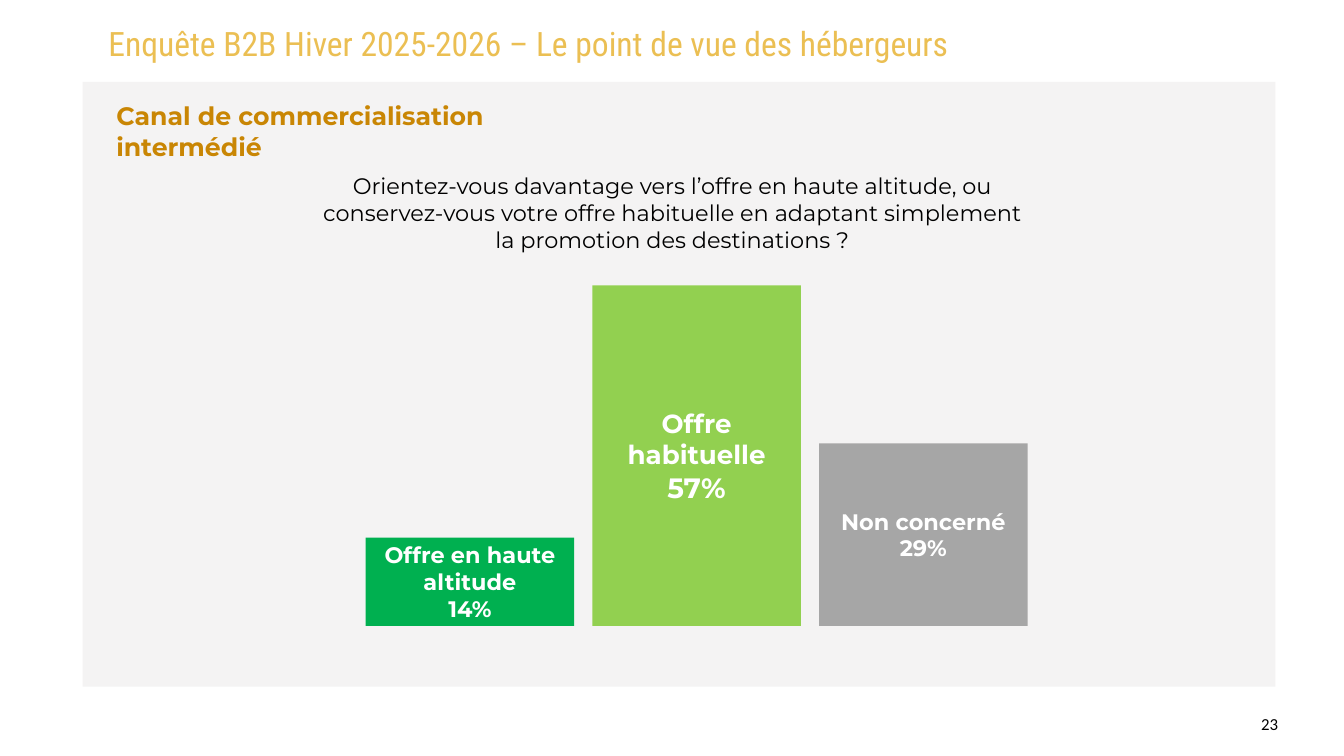
from dataclasses import dataclass

from pptx import Presentation
from pptx import util as u
from pptx.dml.color import RGBColor
from pptx.enum import shapes, text
from pptx.oxml.xmlchemy import OxmlElement


@dataclass(frozen=True)
class Theme:
    title_font: str = "Roboto Condensed"
    body_font: str = "Montserrat"
    number_font: str = "Calibri"
    title_color: str = "EBBF53"
    heading_color: str = "C98604"
    text_color: str = "000000"
    bar_text_color: str = "FFFFFF"
    panel_color: str = "F4F3F3"
    high_altitude_color: str = "00B050"
    usual_color: str = "92D050"
    unconcerned_color: str = "A6A6A6"
    title_size: int = 36
    heading_size: int = 27
    question_size: int = 24
    number_size: int = 18
    bar_size: int = 24
    tall_bar_size: int = 28
    tall_value_size: int = 30


class SlideBuilder:
    def __init__(self, slide, theme):
        self.slide = slide
        self.theme = theme

    def place(self, shape, left, top, width, height):
        shape.left, shape.top = u.Cm(left), u.Cm(top)
        shape.width, shape.height = u.Cm(width), u.Cm(height)

    def format(self, paragraph, font, size, color, bold=False, align=text.PP_ALIGN.LEFT):
        paragraph.alignment = align
        for run in paragraph.runs:
            run.font.name = font
            run.font.size = u.Pt(size)
            run.font.bold = bold
            run.font.color.rgb = RGBColor.from_string(color)

    def prepare(self, frame, anchor=text.MSO_ANCHOR.TOP):
        frame.word_wrap = True
        frame.auto_size = text.MSO_AUTO_SIZE.NONE
        frame.vertical_anchor = anchor

    def rectangle(self, color, *box):
        shape = self.slide.shapes.add_shape(
            shapes.MSO_SHAPE.RECTANGLE, *(u.Cm(length) for length in box))
        shape.shadow.inherit = False
        shape.fill.solid()
        shape.fill.fore_color.rgb = RGBColor.from_string(color)
        shape.line.fill.background()
        return shape

    def panel(self, *box):
        shape = self.rectangle(self.theme.panel_color, *box)
        self.slide.shapes.title.element.addprevious(shape.element)

    def title(self, content, *box):
        shape = self.slide.shapes.title
        self.place(shape, *box)
        self.prepare(shape.text_frame)
        shape.text_frame.text = content
        self.format(shape.text_frame.paragraphs[0], self.theme.title_font,
                    self.theme.title_size, self.theme.title_color)

    def heading(self, content, *box):
        shape = self.slide.placeholders[1]
        self.place(shape, *box)
        self.prepare(shape.text_frame)
        shape.text_frame.text = content
        paragraph = shape.text_frame.paragraphs[0]
        properties = paragraph._p.get_or_add_pPr()
        properties.set("marL", "0")
        properties.set("indent", "0")
        properties.append(OxmlElement("a:buNone"))
        paragraph.space_before = u.Pt(0)
        self.format(paragraph, self.theme.body_font, self.theme.heading_size,
                    self.theme.heading_color, bold=True)

    def label(self, content, font, size, align, *box):
        shape = self.slide.shapes.add_textbox(*(u.Cm(length) for length in box))
        self.prepare(shape.text_frame)
        shape.text_frame.text = content
        self.format(shape.text_frame.paragraphs[0], font, size,
                    self.theme.text_color, align=align)

    def bar(self, name, value, color, name_size, value_size, *box):
        shape = self.rectangle(color, *box)
        self.prepare(shape.text_frame, text.MSO_ANCHOR.MIDDLE)
        shape.text_frame.text = f"{name}\n{value}"
        for paragraph, size in zip(shape.text_frame.paragraphs, (name_size, value_size)):
            self.format(paragraph, self.theme.body_font, size, self.theme.bar_text_color,
                        bold=True, align=text.PP_ALIGN.CENTER)


def main():
    theme = Theme()
    presentation = Presentation()
    presentation.slide_width = u.Cm(50.8)
    presentation.slide_height = u.Cm(28.58)
    slide = presentation.slides.add_slide(presentation.slide_layouts[1])
    builder = SlideBuilder(slide, theme)

    builder.panel(3.12, 3.1, 45.09, 22.86)
    builder.title("Enquête B2B Hiver 2025-2026 – Le point de vue des hébergeurs",
                  3.84, 0.74, 36.07, 1.8)
    builder.heading("Canal de commercialisation intermédié", 4.14, 3.68, 19.96, 1.63)
    builder.label("23", theme.number_font, theme.number_size, text.PP_ALIGN.LEFT,
                  47.42, 26.85, 2.87, 1.02)
    builder.label(
        "Orientez-vous davantage vers l’offre en haute altitude, ou conservez-vous votre "
        "offre habituelle en adaptant simplement la promotion des destinations ?",
        theme.body_font, theme.question_size, text.PP_ALIGN.CENTER,
        11.56, 6.38, 27.69, 3.33)

    first_left, baseline, bar_width, step = 13.82, 23.66, 7.88, 8.57
    bars = [
        ("Offre en haute altitude", "14%", theme.high_altitude_color,
         theme.bar_size, theme.bar_size, 3.33),
        ("Offre habituelle", "57%", theme.usual_color,
         theme.tall_bar_size, theme.tall_value_size, 12.87),
        ("Non concerné", "29%", theme.unconcerned_color,
         theme.bar_size, theme.bar_size, 6.9),
    ]
    for index, (*style, height) in enumerate(bars):
        builder.bar(*style, first_left + index * step, baseline - height, bar_width, height)

    presentation.save("out.pptx")


if __name__ == "__main__":
    main()
